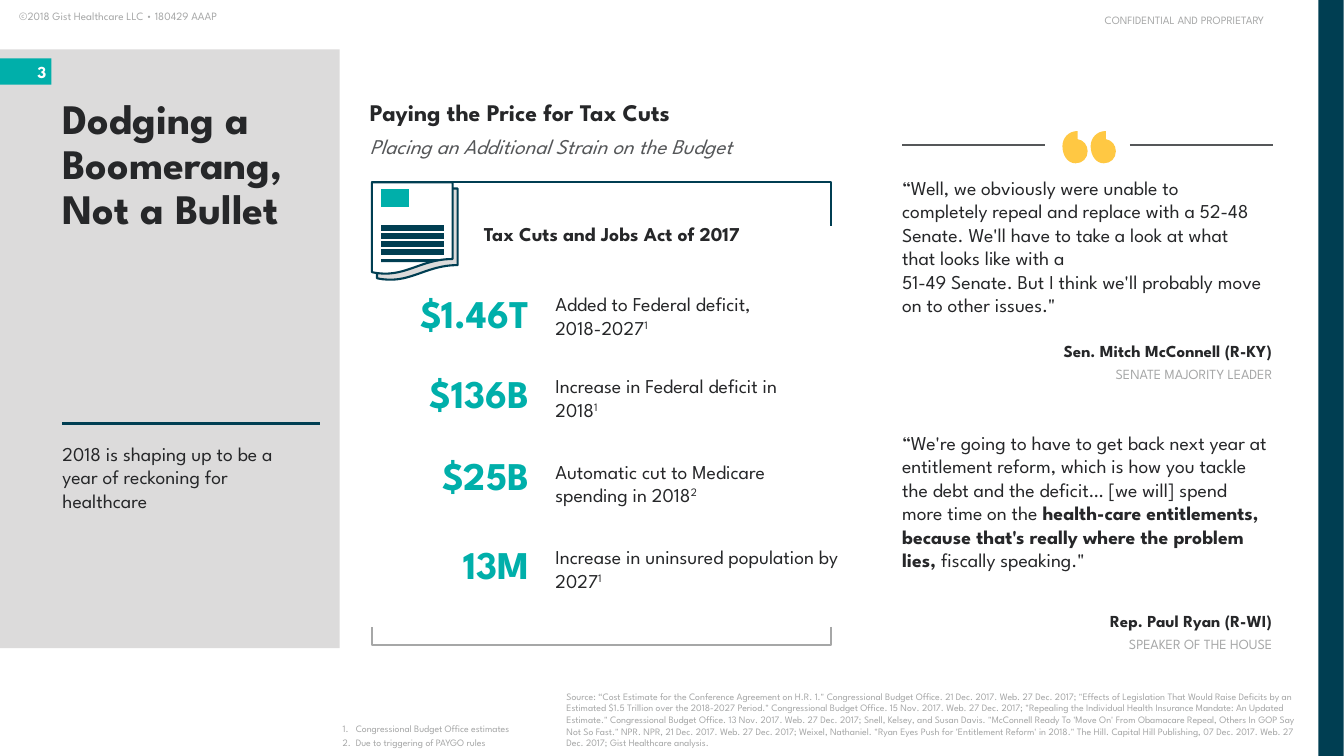
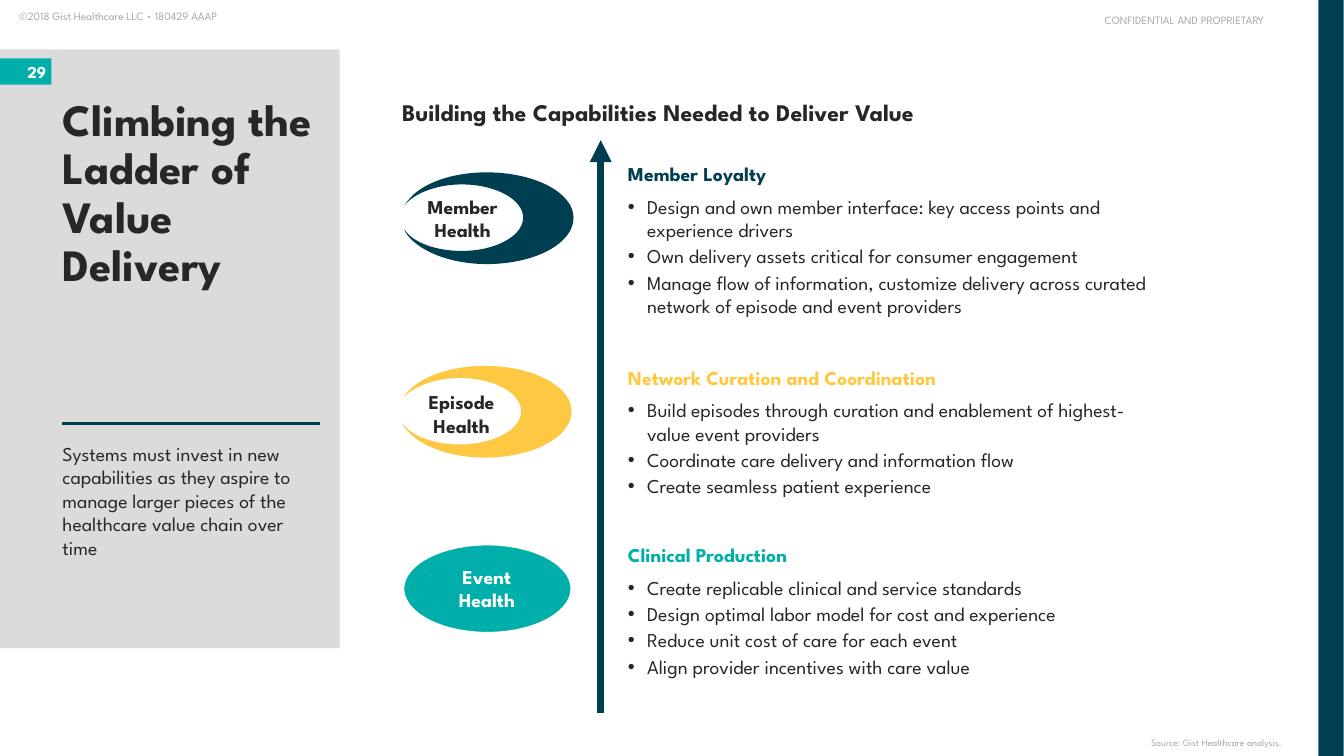
from lxml.etree import Element, SubElement
from pptx import Presentation
from pptx.dml.color import RGBColor
from pptx.enum.shapes import MSO_CONNECTOR, MSO_SHAPE
from pptx.enum.text import MSO_ANCHOR, MSO_AUTO_SIZE, PP_ALIGN
from pptx.oxml.ns import qn
from pptx.util import Emu, Pt

EMU_PER_PX = 9144
FONT = "League Spartan"
INK, SLATE, SILVER, PANEL = "262729", "555759", "A6A7A7", "DCDBDB"
NAVY, TEAL, GOLD, WHITE = "003E52", "00AFAA", "FFC843", "FFFFFF"
BULLET = ("a:buChar", {"char": "•"}, 19)
NUMBER = ("a:buAutoNum", {"type": "arabicPeriod"}, 13)
BREAK = object()

QUOTE_MARK = [(15, 8), (15, 0), (6, 0, 0, 7, 0, 15), (0, 24, 5, 32, 13, 32),
              (20, 32, 25, 27, 25, 20), (25, 14, 21, 9, 15, 8)]
SHEET = [(0, 0), (80, 0), (80, 76), (47, 76, 32, 96, 0, 89)]
FOLD = [(0, 0), (62, 0), (50, 3), (0, 3)]
CRESCENT = [(82, 0), (129, 0, 168, 20, 168, 45), (168, 71, 129, 91, 82, 91),
            (44, 91, 12, 77, 1, 59), (0, 56), (1, 58), (10, 70, 32, 78, 57, 78),
            (91, 78, 118, 63, 118, 45), (118, 27, 91, 12, 57, 12),
            (32, 12, 10, 21, 1, 32), (0, 34), (1, 32), (12, 13, 44, 0, 82, 0)]
LOWER_BRACKET = [(455, 0), (455, 18), (0, 18), (0, 0)]

METRICS = [
    ("$1.46T", 287, 290, 244, "Added to Federal deficit, 2018-2027", "1"),
    ("$136B", 366, 371, 239, "Increase in Federal deficit in 2018", "1"),
    ("$25B", 448, 456, 270, "Automatic cut to Medicare spending in 2018", "2"),
    ("13M", 536, 541, 288, "Increase in uninsured population by 2027", "1"),
]

QUOTES = [
    (174, 360, 141, 338, "Sen. Mitch McConnell (R-KY)", "SENATE MAJORITY LEADER",
     [("“Well, we obviously were unable to completely repeal and replace with a "
       "52-48 Senate. We'll have to take a look at what that looks like with a", ""),
      (BREAK, ""),
      ("51-49 Senate. But I think we'll probably move on to other issues.\"", "")]),
    (427, 364, 165, 606, "Rep. Paul Ryan (R-WI)", "SPEAKER OF THE HOUSE",
     [("“We're going to have to get back next year at entitlement reform, which is "
       "how you tackle the debt and the deficit… [we will] spend more time on the ", ""),
      ("health-care entitlements, because that's really where the problem lies, ", "bold"),
      ("fiscally speaking.\"", "")]),
]

TAX_SOURCE = (
    "Source: “Cost Estimate for the Conference Agreement on H.R. 1.\" Congressional "
    "Budget Office. 21 Dec. 2017. Web. 27 Dec. 2017; \"Effects of Legislation That Would "
    "Raise Deficits by an Estimated $1.5 Trillion over the 2018-2027 Period.\" "
    "Congressional Budget Office. 15 Nov. 2017. Web. 27 Dec. 2017; \"Repealing the "
    "Individual Health Insurance Mandate: An Updated Estimate.\" Congressional Budget "
    "Office. 13 Nov. 2017. Web. 27 Dec. 2017; Snell, Kelsey, and Susan Davis. "
    "\"McConnell Ready To 'Move On' From Obamacare Repeal, Others In GOP Say Not So "
    "Fast.\" NPR. NPR, 21 Dec. 2017. Web. 27 Dec. 2017; Weixel, Nathaniel. \"Ryan Eyes "
    "Push for 'Entitlement Reform' in 2018.\" The Hill. Capital Hill Publishing, 07 Dec. "
    "2017. Web. 27 Dec. 2017; Gist Healthcare analysis."
)

CAPABILITIES = [
    (161, 123, "Member Loyalty", NAVY, [
        "Design and own member interface: key access points and experience drivers",
        "Own delivery assets critical for consumer engagement",
        "Manage flow of information, customize delivery across curated network of "
        "episode and event providers"]),
    (363, 100, "Network Curation and Coordination", GOLD, [
        "Build episodes through curation and enablement of highest-value event providers",
        "Coordinate care delivery and information flow",
        "Create seamless patient experience"]),
    (539, 103, "Clinical Production", TEAL, [
        "Create replicable clinical and service standards",
        "Design optimal labor model for cost and experience",
        "Reduce unit cost of care for each event",
        "Align provider incentives with care value"]),
]


def px(length):
    return Emu(round(length * EMU_PER_PX))


def rgb(color):
    return RGBColor.from_string(color)


def paint(shape, fill=None, line=None, weight=1.5):
    shape.shadow.inherit = False
    if fill:
        shape.fill.solid()
        shape.fill.fore_color.rgb = rgb(fill)
    else:
        shape.fill.background()
    if line:
        shape.line.color.rgb = rgb(line)
        shape.line.width = Pt(weight)
    else:
        shape.line.fill.background()
    return shape


def add_preset(page, kind, left, top, width, height, **look):
    shape = page.shapes.add_shape(kind, px(left), px(top), px(width), px(height))
    return paint(shape, **look)


def add_line(page, start, end, color, weight, arrow=False):
    line = page.shapes.add_connector(MSO_CONNECTOR.STRAIGHT, *map(px, start + end))
    line.line.color.rgb = rgb(color)
    line.line.width = Pt(weight)
    if arrow:
        SubElement(line.line._get_or_add_ln(), qn("a:tailEnd"), type="triangle")
    SubElement(line._element.spPr, qn("a:effectLst"))


def add_outline(page, outline, left, top, closed=True, **look):
    anchors = [(px(part[-2]), px(part[-1])) for part in outline]
    builder = page.shapes.build_freeform(*anchors[0], scale=1.0)
    builder.add_line_segments(anchors[1:], close=closed)
    shape = builder.convert_to_shape(px(left), px(top))
    segments = list(shape._element.iter(qn("a:lnTo")))
    for part, segment in zip(outline[1:], segments):
        if len(part) == 6:
            curve = Element(qn("a:cubicBezTo"))
            for x, y in zip(part[::2], part[1::2]):
                SubElement(curve, qn("a:pt"), x=str(px(x)), y=str(px(y)))
            segment.getparent().replace(segment, curve)
    return paint(shape, **look)


def set_frame(box, anchor=MSO_ANCHOR.TOP, bottom=0):
    frame = box.text_frame
    frame.word_wrap = True
    frame.auto_size = MSO_AUTO_SIZE.NONE
    frame.vertical_anchor = anchor
    frame.margin_left = frame.margin_right = frame.margin_top = 0
    frame.margin_bottom = px(bottom)


def add_paragraph(box, text, size, color=INK, bold=False, italic=False,
                  align=PP_ALIGN.LEFT, gap=0, bullet=None, spacing=None):
    frame = box.text_frame
    if frame.text:
        para = frame.add_paragraph()
        para.space_before = Pt(gap)
    else:
        para = frame.paragraphs[0]
    para.alignment = align
    if spacing:
        para.line_spacing = spacing
    if bullet:
        tag, attributes, indent = bullet
        properties = para._p.get_or_add_pPr()
        properties.set("marL", str(px(indent)))
        properties.set("indent", str(-px(indent)))
        SubElement(SubElement(properties, qn("a:buClr")), qn("a:srgbClr"), val=color)
        SubElement(properties, qn("a:buFont"), typeface="Arial")
        SubElement(properties, qn(tag), attributes)
    font = para.font
    font.name, font.size, font.bold, font.italic = FONT, Pt(size), bold, italic
    font.color.rgb = rgb(color)
    for words, style in [(text, "")] if isinstance(text, str) else text:
        if words is BREAK:
            para.add_line_break()
            continue
        span = para.add_run()
        span.text = words
        if style == "bold":
            span.font.bold = True
        elif style == "super":
            span._r.get_or_add_rPr().set("baseline", "30000")


def add_text(page, left, top, width, height, texts, size, anchor=MSO_ANCHOR.TOP,
             bottom=0, **style):
    box = page.shapes.add_textbox(px(left), px(top), px(width), px(height))
    set_frame(box, anchor, bottom)
    for text in texts:
        add_paragraph(box, text, size, **style)
    return box


def add_footnote(page, left, width, texts, **style):
    add_text(page, left, 708, width, 42, texts, 7, anchor=MSO_ANCHOR.BOTTOM, bottom=7,
             color=SILVER, gap=2, **style)


def add_page(deck, number, title, title_size, title_bounds, lead, lead_bounds):
    page = deck.slides.add_slide(deck.slide_layouts[5])
    add_text(page, 19, 9, 228, 13, ["©2018 Gist Healthcare LLC • 180429 AAAP"], 8,
             color=SILVER)
    for bounds, color in [((0, 49, 337, 594), PANEL), ((1308, 0, 25, 750), NAVY),
                          ((0, 58, 51, 26), TEAL)]:
        add_preset(page, MSO_SHAPE.RECTANGLE, *bounds, fill=color)
    add_text(page, 12, 61, 34, 20, [number], 12, color=WHITE, bold=True,
             align=PP_ALIGN.RIGHT)
    add_line(page, (62, 420), (317, 420), NAVY, 1.75)
    add_text(page, 1096, 13, 181, 13, ["CONFIDENTIAL AND PROPRIETARY"], 8, color=SILVER)
    heading = page.shapes.title
    heading.left, heading.top, heading.width, heading.height = map(px, title_bounds)
    set_frame(heading)
    add_paragraph(heading, title, title_size, bold=True, spacing=0.9)
    page.shapes._spTree.append(heading._element)
    add_text(page, *lead_bounds, [lead], 14)
    return page


def add_bill(page):
    for left, top, color in [(374, 187, PANEL), (369, 181, WHITE)]:
        add_outline(page, SHEET, left, top, fill=color, line=NAVY)
    for row in range(4):
        y = 226 + 8 * row
        add_line(page, (378, y), (440, y), NAVY, 4)
    for y in (192, 201):
        add_line(page, (378, y), (406, y), TEAL, 7)
    add_outline(page, FOLD, 378, 257, fill=NAVY)


def build_tax_page(deck):
    page = add_page(deck, "3", "Dodging a Boomerang, Not a Bullet", 30,
                    (62, 97, 261, 136),
                    "2018 is shaping up to be a year of reckoning for healthcare",
                    (62, 438, 224, 94))
    add_footnote(page, 562, 736, [TAX_SOURCE])
    add_footnote(page, 340, 206, ["Congressional Budget Office estimates",
                                  "Due to triggering of PAYGO rules"], bullet=NUMBER)
    for left in (1082, 1054):
        add_outline(page, QUOTE_MARK, left, 130, fill=GOLD)
    for left in (895, 1121):
        add_line(page, (left, 144), (left + 142, 144), SLATE, 1)
    for quote_top, width, height, name_top, name, role, quote in QUOTES:
        credit = add_text(page, 977, name_top, 285, 41, [name], 12, bold=True,
                          align=PP_ALIGN.RIGHT)
        add_paragraph(credit, role, 10, color=SILVER, align=PP_ALIGN.RIGHT, gap=3)
        add_text(page, 895, quote_top, width, height, [quote], 14)
    add_text(page, 367, 97, 350, 29, ["Paying the Price for Tax Cuts"], 17, bold=True)
    add_text(page, 367, 132, 455, 25, ["Placing an Additional Strain on the Budget"], 15,
             color=SLATE, italic=True)
    bracket = add_preset(page, MSO_SHAPE.LEFT_BRACKET, 575, -25, 43, 455, line=NAVY)
    bracket.adjustments[0] = 0
    bracket.rotation = 90
    add_bill(page)
    add_text(page, 480, 220, 315, 24, ["Tax Cuts and Jobs Act of 2017"], 14, bold=True)
    for figure, figure_top, label_top, width, label, note in METRICS:
        add_text(page, 387, figure_top, 138, 47, [figure], 28, color=TEAL, bold=True,
                 align=PP_ALIGN.RIGHT)
        add_text(page, 551, label_top, width, 47, [[(label, ""), (note, "super")]], 14)
    add_outline(page, LOWER_BRACKET, 369, 622, closed=False, line=SILVER)


def build_ladder_page(deck):
    page = add_page(deck, "29", "Climbing the Ladder of Value Delivery", 32,
                    (62, 97, 250, 194),
                    "Systems must invest in new capabilities as they aspire to manage "
                    "larger pieces of the healthcare value chain over time",
                    (62, 438, 250, 118))
    add_preset(page, MSO_SHAPE.OVAL, 399, 539, 169, 90, fill=TEAL, line=WHITE, weight=3)
    add_outline(page, CRESCENT, 401, 171, fill=NAVY)
    add_outline(page, CRESCENT, 399, 363, fill=GOLD)
    for left, top, width, label, color in [(414, 193, 90, "Member Health", INK),
                                           (413, 387, 90, "Episode Health", INK),
                                           (444, 560, 78, "Event Health", WHITE)]:
        add_text(page, left, top, width, 47, [label], 14, color=color, bold=True,
                 align=PP_ALIGN.CENTER)
    add_text(page, 399, 97, 604, 29,
             ["Building the Capabilities Needed to Deliver Value"], 17, bold=True)
    for top, height, heading, color, points in CAPABILITIES:
        add_text(page, 623, top, 439, 24, [heading], 14, color=color, bold=True)
        add_text(page, 623, top + 32, 535, height, points, 14, gap=2, bullet=BULLET)
    add_line(page, (596, 707), (596, 139), NAVY, 5.25, arrow=True)
    add_footnote(page, 1142, 165, ["Source: Gist Healthcare analysis."])


def main():
    deck = Presentation()
    deck.slide_width, deck.slide_height = px(1333.33), px(750)
    build_tax_page(deck)
    build_ladder_page(deck)
    deck.save("out.pptx")


if __name__ == "__main__":
    main()
